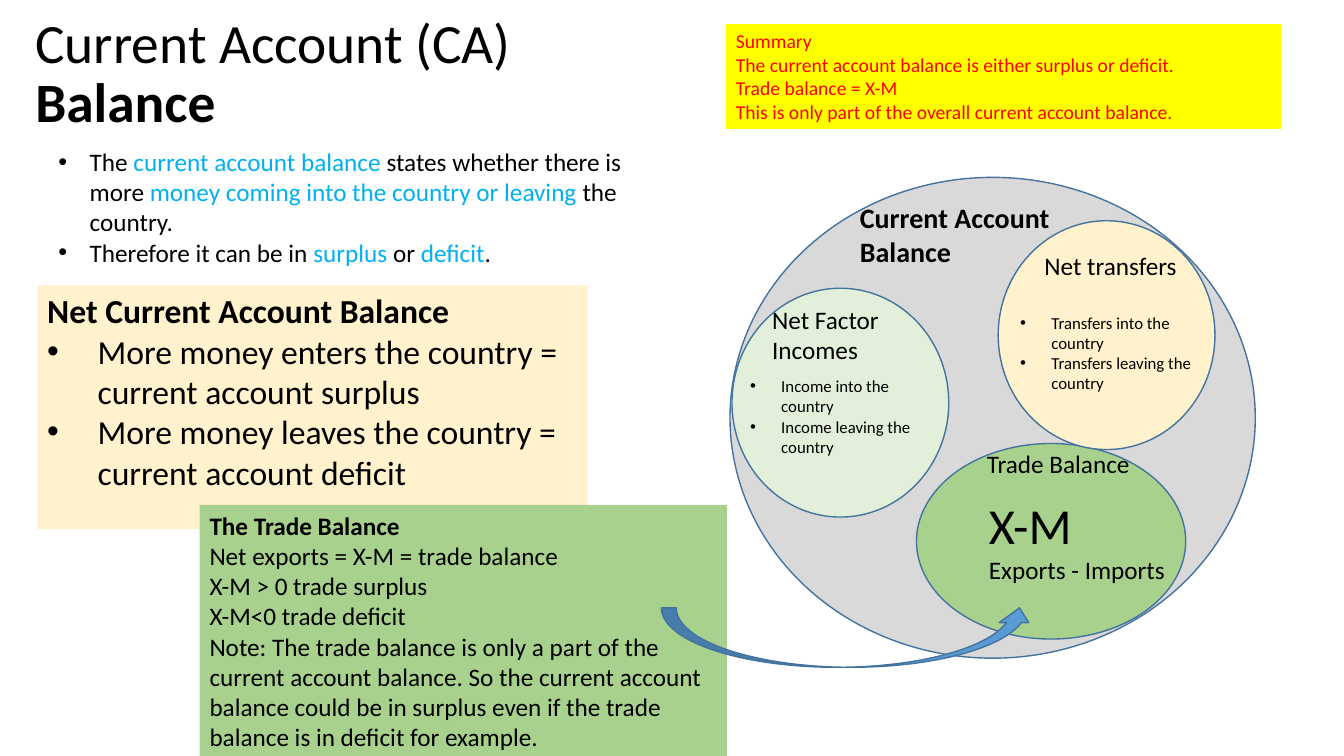
import dataclasses

import pptx
import pptx.dml.color
import pptx.enum.shapes
import pptx.enum.text
import pptx.oxml.ns
import pptx.util
from lxml import etree

PX = 9144  # EMU per px, 100 px to the inch
SHAPE = pptx.enum.shapes.MSO_SHAPE


@dataclasses.dataclass(frozen=True)
class Theme:
    font: str = "Calibri"
    text: str = "000000"
    accent: str = "00B0F0"
    alert: str = "FF0000"
    yellow: str = "FFFF00"
    cream: str = "FFF2CC"
    green: str = "A9D18E"
    pale_green: str = "E2F0D9"
    grey: str = "D9D9D9"
    arrow: str = "5B9BD5"
    outline: str = "43739E"
    title: float = 39.6
    formula: float = 36
    heading: float = 24
    subhead: float = 20
    body: float = 18
    summary: float = 14
    detail: float = 12


@dataclasses.dataclass(frozen=True)
class Run:
    text: str
    size: float = 0
    color: str = ""
    bold: bool = False


def rgb(value):
    return pptx.dml.color.RGBColor.from_string(value)


class Deck:
    def __init__(self, theme):
        self.theme = theme
        self.prs = pptx.Presentation()
        self.prs.slide_width = 1333 * PX
        self.prs.slide_height = 750 * PX
        self.slide = self.prs.slides.add_slide(self.prs.slide_layouts[1])

    def add_text(self, sp, paras, size, color="", bullet_from=None, indent=31, spacing=1.0):
        """Each paragraph is a string or a list of runs."""
        tf = sp.text_frame
        tf.word_wrap = True
        tf.auto_size = pptx.enum.text.MSO_AUTO_SIZE.NONE
        for i, runs in enumerate(paras):
            p = tf.paragraphs[0] if i == 0 else tf.add_paragraph()
            p.alignment = pptx.enum.text.PP_ALIGN.LEFT
            p.line_spacing = spacing
            p.space_before = p.space_after = pptx.util.Pt(0)
            for run in [Run(runs)] if isinstance(runs, str) else runs:
                r = p.add_run()
                r.text = run.text
                r.font.name = self.theme.font
                r.font.size = pptx.util.Pt(run.size or size)
                r.font.bold = run.bold
                r.font.color.rgb = rgb(run.color or color or self.theme.text)
            if bullet_from is not None and i >= bullet_from:
                self.bullet(p, indent)

    def bullet(self, p, indent):
        pPr = p._p.get_or_add_pPr()
        pPr.set("marL", str(indent * PX))
        pPr.set("indent", str(-indent * PX))
        for tag, key, value in (("a:buFont", "typeface", "Arial"), ("a:buChar", "char", "•")):
            etree.SubElement(pPr, pptx.oxml.ns.qn(tag)).set(key, value)

    def placeholder(self, idx, box, anchor, paras, size, **style):
        sp = self.slide.placeholders[idx]
        sp.left, sp.top, sp.width, sp.height = (v * PX for v in box)
        sp.text_frame.vertical_anchor = anchor
        self.add_text(sp, paras, size, **style)

    def shape(self, kind, box, fill, outline=True):
        sp = self.slide.shapes.add_shape(kind, *(v * PX for v in box))
        sp.shadow.inherit = False
        sp.fill.solid()
        sp.fill.fore_color.rgb = rgb(fill)
        if outline:
            sp.line.color.rgb = rgb(self.theme.outline)
            sp.line.width = pptx.util.Pt(1)
        else:
            sp.line.fill.background()
        return sp

    def panel(self, box, fill, paras, size, **style):
        sp = self.shape(SHAPE.RECTANGLE, box, fill, outline=False)
        sp.text_frame.vertical_anchor = pptx.enum.text.MSO_ANCHOR.TOP
        self.add_text(sp, paras, size, **style)

    def label(self, box, paras, size, **style):
        sp = self.slide.shapes.add_textbox(*(v * PX for v in box))
        self.add_text(sp, paras, size, **style)


def main():
    th = Theme()
    deck = Deck(th)
    anchor = pptx.enum.text.MSO_ANCHOR

    # Title and definition
    deck.placeholder(0, (25, 21, 657, 107), anchor.MIDDLE,
                     [[Run("Current Account (CA) "), Run("Balance", bold=True)]],
                     th.title, spacing=0.9)
    deck.placeholder(1, (48, 140, 585, 131), anchor.TOP, [
        [Run("The "), Run("current account balance ", color=th.accent),
         Run("states whether there is more "),
         Run("money coming into the country or leaving ", color=th.accent),
         Run("the country.")],
        [Run("Therefore it can be in "), Run("surplus", color=th.accent), Run(" or "),
         Run("deficit", color=th.accent), Run(".")],
    ], th.body, bullet_from=0)

    # Text panels
    deck.panel((37, 283, 546, 242), th.cream, [
        [Run("Net Current Account Balance", bold=True)],
        "More money enters the country = current account surplus",
        "More money leaves the country = current account deficit",
    ], th.heading, bullet_from=1, indent=50)
    deck.panel((198, 501, 523, 279), th.green, [
        [Run("The Trade Balance", bold=True)],
        "Net exports = X-M = trade balance",
        "X-M > 0 trade surplus",
        "X-M<0 trade deficit",
        "Note: The trade balance is only a part of the current account balance. "
        "So the current account balance could be in surplus even if the trade "
        "balance is in deficit for example.",
    ], th.body)
    deck.panel((720, 24, 551, 104), th.yellow, [
        "Summary",
        "The current account balance is either surplus or deficit.",
        "Trade balance = X-M",
        "This is only part of the overall current account balance.",
    ], th.summary, color=th.alert)

    # Whole current account
    deck.shape(SHAPE.OVAL, (724, 176, 521, 477), th.grey)
    deck.label((843, 194, 271, 77), [[Run("Current Account Balance", bold=True)]], th.subhead)

    # Trade balance
    deck.shape(SHAPE.OVAL, (909, 440, 267, 194), th.green)
    deck.label((969, 440, 235, 40), ["Trade Balance"], th.body)
    deck.label((971, 485, 272, 104), [[Run("X-M", size=th.formula)], "Exports - Imports"], th.body)

    # Net factor incomes and net transfers
    for circle, fill, name_box, name, list_box, flows in (
        ((726, 286, 215, 227), th.pale_green, (756, 297, 153, 71), "Net Factor Incomes",
         (734, 368, 211, 91), ["Income into the country", "Income leaving the country"]),
        ((990, 219, 215, 227), th.cream, (1026, 243, 155, 40), "Net transfers",
         (1002, 305, 211, 91), ["Transfers into the country", "Transfers leaving the country"]),
    ):
        deck.shape(SHAPE.OVAL, circle, fill)
        deck.label(name_box, [name], th.body)
        deck.label(list_box, flows, th.detail, bullet_from=0)

    # Arrow from the trade panel to the trade circle
    deck.shape(SHAPE.CURVED_UP_ARROW, (656, 603, 370, 59), th.arrow)

    deck.prs.save("out.pptx")


if __name__ == "__main__":
    main()
